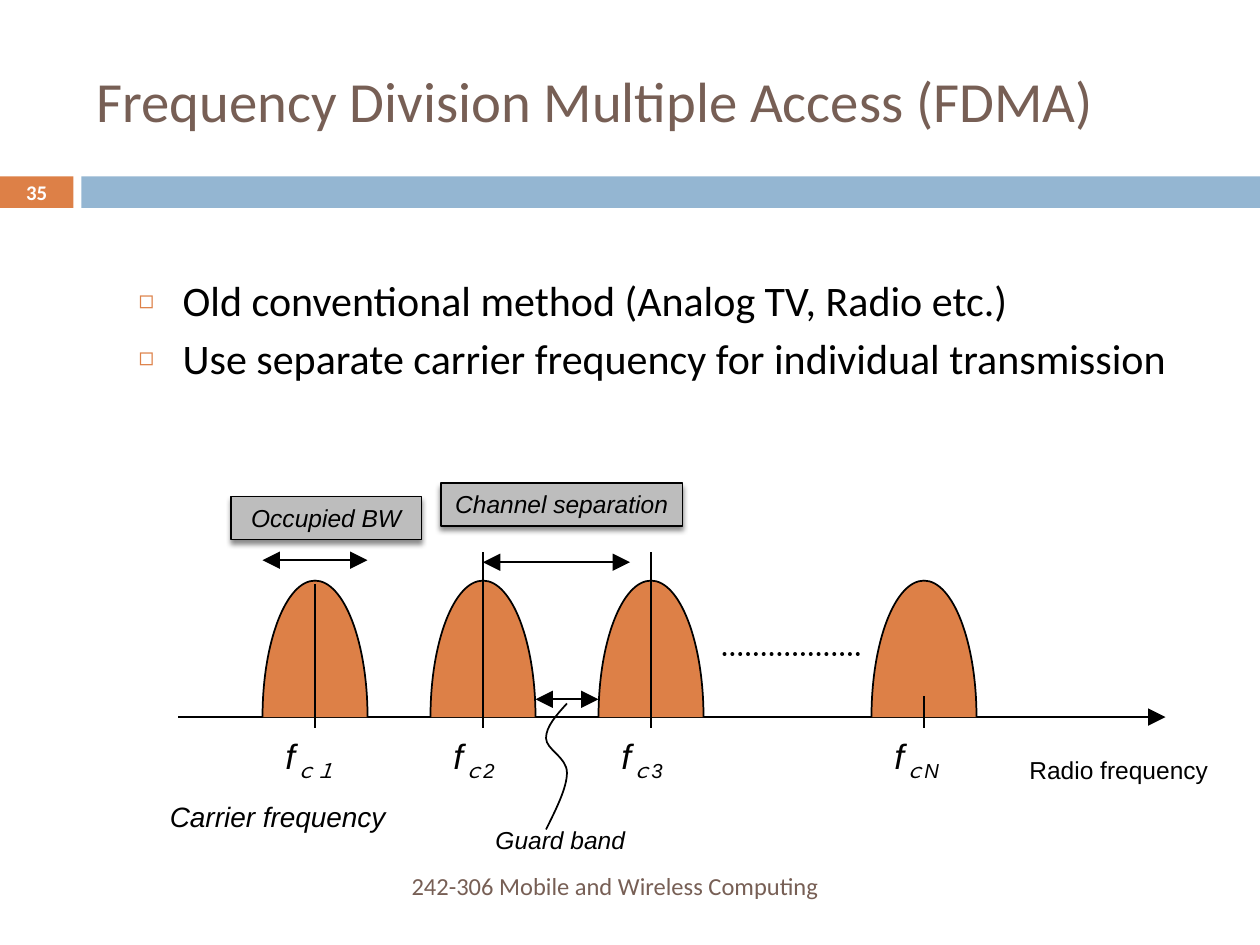
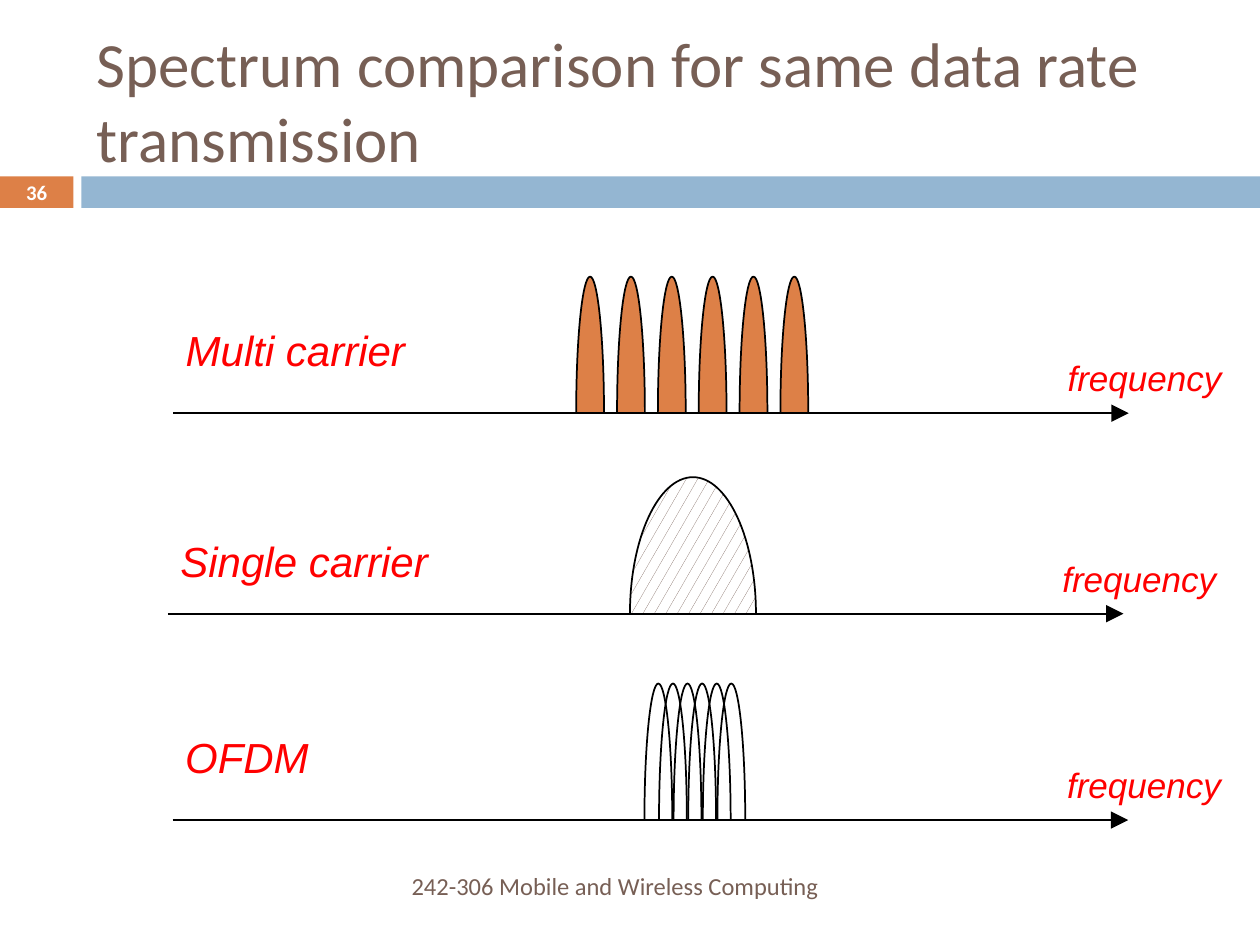
"""Build two slides on frequency division and carrier spectra."""
import dataclasses
from typing import Any, Optional, Sequence

import lxml.etree
import pptx
import pptx.dml.color
import pptx.enum.dml
import pptx.enum.shapes
import pptx.enum.text
import pptx.oxml.ns
import pptx.util

COLOURS = {
    "ink": "000000", "paper": "FFFFFF", "title": "775F55", "accent": "DD8047",
    "band": "94B6D2", "callout": "BDBDBD", "caption": "FF0000",
}
SLIDE_WIDTH = pptx.util.Inches(10)
SLIDE_HEIGHT = pptx.util.Inches(7.5)
COLUMNS, ROWS = 120, 90
HEADING_FONT, DIAGRAM_FONT = "Calibri", "Arial"
LOBE_HEIGHT = 13
ROUNDNESS = 0.55
COURSE = "242-306 Mobile and Wireless Computing"
ALIGN = pptx.enum.text.PP_ALIGN
ANCHOR = pptx.enum.text.MSO_ANCHOR
DASH = pptx.enum.dml.MSO_LINE
Point = tuple[float, float]


@dataclasses.dataclass(frozen=True)
class Area:
    """A rectangle in grid columns and rows."""
    left: float
    top: float
    width: float
    height: float

    def emu(self) -> tuple[int, int, int, int]:
        """Return the rectangle in slide units."""
        return (*to_emu((self.left, self.top)), *to_emu((self.width, self.height)))


@dataclasses.dataclass(frozen=True)
class TextStyle:
    """The look of one paragraph."""
    size: float
    colour: str = "ink"
    font: str = DIAGRAM_FONT
    italic: bool = False
    bold: bool = False
    align: Any = ALIGN.LEFT


@dataclasses.dataclass(frozen=True)
class Label:
    """A short text, with an optional lowered part after it."""
    text: str
    area: Area
    style: TextStyle
    fill: Optional[str] = None
    subscript: str = ""
    anchor: Any = ANCHOR.TOP
    framed: bool = False


@dataclasses.dataclass(frozen=True)
class Stroke:
    """A straight line with optional arrowheads."""
    start: Point
    end: Point
    arrows: Sequence[str] = ()
    width: float = 1
    dash: Any = None


@dataclasses.dataclass(frozen=True)
class Carrier:
    """One channel of the frequency division diagram."""
    centre: float
    index: str
    mark_top: float


@dataclasses.dataclass(frozen=True)
class Spectrum:
    """One row of the spectrum comparison."""
    name: str
    axis_left: float
    axis_row: float
    name_rise: float
    first_centre: float
    lobe_width: float
    fill: Optional[str] = None
    count: int = 1
    pitch: float = 0


NOTE = TextStyle(14, italic=True)
CALLOUT = dataclasses.replace(NOTE, align=ALIGN.CENTER)
BANDS = ((Area(0, 16.8, 7, 3), "accent"), (Area(7.75, 16.8, 112.25, 3), "band"))
FDMA_AXIS = 68.3
CARRIERS = (
    Carrier(30, "ｃ１", 55.6), Carrier(46, "ｃ2", 52.6),
    Carrier(62, "ｃ3", 52.6), Carrier(88, "ｃN", 66.3),
)
FDMA_LABELS = (
    Label("Radio frequency", Area(96.85, 71.3, 19.8, 4.1), TextStyle(14), "paper"),
    Label("Carrier frequency", Area(15, 75.6, 29, 4.4), TextStyle(16, italic=True), "paper"),
    Label("Occupied BW", Area(22, 47.3, 18.15, 4.1), CALLOUT, "callout", framed=True),
    Label("Channel separation", Area(42, 46, 23, 4.1), CALLOUT, "callout", framed=True),
    Label("Guard band", Area(46, 78, 20, 4.1), NOTE, "paper"),
)
BOTH_ENDS = ("headEnd", "tailEnd")
FDMA_MEASURES = (
    Stroke((69, 62.3), (82, 62.3), width=2.25, dash=DASH.ROUND_DOT),
    Stroke((25, 53.35), (35, 53.35), BOTH_ENDS),
    Stroke((46, 53.55), (60, 53.55), BOTH_ENDS),
    Stroke((51, 66.6), (57, 66.6), BOTH_ENDS),
)
GUARD_LEADER = (
    (54, 67), (53, 68.1), (52, 69.2), (52, 70.3), (52, 71.4), (54, 72.1), (54, 73.6),
    (54, 75), (53, 77), (52, 79),
)
SPECTRA = (
    Spectrum("Single carrier", 16, 58.45, 8, 66, 12, "pattern"),
    Spectrum("OFDM", 16.45, 78.1, 9, 62.7, 2.65, None, 6, 1.39),
    Spectrum("Multi carrier", 16.5, 39.35, 9, 56.2, 2.65, "accent", 6, 3.89),
)


def to_emu(point: Point) -> tuple[int, int]:
    """Turn a grid point into slide units."""
    return round(point[0] * SLIDE_WIDTH / COLUMNS), round(point[1] * SLIDE_HEIGHT / ROWS)


def rgb(name: str) -> pptx.dml.color.RGBColor:
    """Look up a named colour."""
    return pptx.dml.color.RGBColor.from_string(COLOURS[name])


def add_xml(parent: Any, tag: str, **attributes: str) -> Any:
    """Append one drawing element."""
    return lxml.etree.SubElement(parent, pptx.oxml.ns.qn(f"a:{tag}"), attributes)


def paint(fill: Any, name: Optional[str]) -> None:
    """Apply a named colour, the speckled pattern or no fill."""
    if name is None:
        fill.background()
    elif name == "pattern":
        fill.patterned()
        fill.pattern = pptx.enum.dml.MSO_PATTERN.SMALL_CONFETTI
        fill.fore_color.rgb, fill.back_color.rgb = rgb("title"), rgb("paper")
    else:
        fill.solid()
        fill.fore_color.rgb = rgb(name)


def ink_line(line: Any, width: float) -> None:
    """Give a line the ink colour and a width."""
    line.color.rgb = rgb("ink")
    line.width = pptx.util.Pt(width)


def style_paragraph(paragraph: Any, style: TextStyle) -> None:
    """Format a whole paragraph."""
    paragraph.alignment = style.align
    font = paragraph.font
    font.name, font.size = style.font, pptx.util.Pt(style.size)
    font.bold, font.italic = style.bold, style.italic
    font.color.rgb = rgb(style.colour)


def add_label(slide: Any, label: Label) -> None:
    """Draw a label, framed and shadowed when asked."""
    box = slide.shapes.add_textbox(*label.area.emu())
    paint(box.fill, label.fill)
    if label.framed:
        ink_line(box.line, 0.79)
        effects = add_xml(box._element.spPr, "effectLst")
        shadow = add_xml(effects, "outerShdw", blurRad="38100", dist="30000",
                         dir="5400000", rotWithShape="0")
        add_xml(add_xml(shadow, "srgbClr", val=COLOURS["ink"]), "alpha", val="45000")
    frame = box.text_frame
    frame.word_wrap = True
    frame.vertical_anchor = label.anchor
    paragraph = frame.paragraphs[0]
    paragraph.add_run().text = label.text
    if label.subscript:
        lowered = paragraph.add_run()
        lowered.text = label.subscript
        lowered._r.get_or_add_rPr().set("baseline", "-25000")
    style_paragraph(paragraph, label.style)


def add_stroke(slide: Any, stroke: Stroke) -> None:
    """Draw a straight line."""
    connector = slide.shapes.add_connector(
        pptx.enum.shapes.MSO_CONNECTOR.STRAIGHT, *to_emu(stroke.start), *to_emu(stroke.end))
    ink_line(connector.line, stroke.width)
    outline = connector.line._get_or_add_ln()
    if stroke.dash:
        connector.line.dash_style = stroke.dash
        outline.set("cap", "rnd")
    for end in stroke.arrows:
        add_xml(outline, end, type="triangle", w="lg", len="lg")
    add_xml(connector._element.spPr, "effectLst")


def add_curve(slide: Any, points: Sequence[Point], fill: Optional[str] = None) -> None:
    """Draw cubic curves through a start and groups of three points."""
    start, *rest = [to_emu(point) for point in points]
    builder = slide.shapes.build_freeform(*start)
    builder.add_line_segments(rest, close=False)
    curve = builder.convert_to_shape()
    curve.shadow.inherit = False
    paint(curve.fill, fill)
    ink_line(curve.line, 1)
    outline = next(curve._element.iter(pptx.oxml.ns.qn("a:path")))
    steps = outline.findall(pptx.oxml.ns.qn("a:lnTo"))
    for first in range(0, len(steps), 3):
        cubic = add_xml(outline, "cubicBezTo")
        for step in steps[first:first + 3]:
            cubic.append(step[0])
            outline.remove(step)


def add_lobe(slide: Any, centre: float, base: float, width: float, fill: Optional[str]) -> None:
    """Draw the half ellipse of one carrier."""
    left, right, top = centre - width / 2, centre + width / 2, base - LOBE_HEIGHT
    shoulder = base - LOBE_HEIGHT * ROUNDNESS
    reach = width / 2 * ROUNDNESS
    add_curve(slide, (
        (right, base), (right, shoulder), (centre + reach, top), (centre, top),
        (centre - reach, top), (left, shoulder), (left, base),
    ), fill)


def place(placeholder: Any, area: Area) -> Any:
    """Move a placeholder and return its text frame."""
    placeholder.left, placeholder.top, placeholder.width, placeholder.height = area.emu()
    placeholder.text_frame.auto_size = pptx.enum.text.MSO_AUTO_SIZE.NONE
    return placeholder.text_frame


def move_bands_to_master(deck: Any, slide: Any) -> None:
    """Draw the bands once, on the master shared by all slides."""
    for identifier, (area, colour) in enumerate(BANDS, start=101):
        band = slide.shapes.add_shape(pptx.enum.shapes.MSO_SHAPE.RECTANGLE, *area.emu())
        band.shadow.inherit = False
        paint(band.fill, colour)
        band.line.fill.background()
        band._element.nvSpPr.cNvPr.set("id", str(identifier))
        deck.slide_master.shapes._spTree.append(band._element)


def start_slide(deck: Any, layout: int, title: str, size: float, number: int) -> Any:
    """Add a slide with its number, title and footer."""
    slide = deck.slides.add_slide(deck.slide_layouts[layout])
    heading = place(slide.shapes.title, Area(8, 3, 107, 13))
    heading.text = title
    heading.vertical_anchor = ANCHOR.MIDDLE
    style_paragraph(heading.paragraphs[0], TextStyle(size, "title", HEADING_FONT))
    number_style = TextStyle(11.9, "paper", HEADING_FONT, bold=True, align=ALIGN.CENTER)
    footer_style = TextStyle(14, "title", HEADING_FONT, align=ALIGN.RIGHT)
    add_label(slide, Label(str(number), Area(0, 16.7, 7, 3.2), number_style, anchor=ANCHOR.MIDDLE))
    add_label(slide, Label(COURSE, Area(8, 82, 71.15, 4.8), footer_style, anchor=ANCHOR.MIDDLE))
    return slide


def fill_bullets(frame: Any, items: Sequence[str]) -> None:
    """Write a list with small square bullets."""
    frame.text = "\n".join(items)
    for position, paragraph in enumerate(frame.paragraphs):
        properties = paragraph._p.get_or_add_pPr()
        indent = pptx.util.Inches(0.35)
        properties.set("marL", str(indent))
        properties.set("indent", str(-indent))
        add_xml(add_xml(properties, "buClr"), "srgbClr", val=COLOURS["accent"])
        add_xml(properties, "buSzPct", val="60000")
        add_xml(properties, "buChar", char="◻")
        paragraph.line_spacing = 0.9
        paragraph.space_before = pptx.util.Pt(7 if position else 0)
        style_paragraph(paragraph, TextStyle(24, font=HEADING_FONT))


def build_fdma(deck: Any) -> None:
    """Build the frequency division slide."""
    slide = start_slide(deck, 1, "Frequency Division Multiple Access (FDMA)", 32.4, 35)
    move_bands_to_master(deck, slide)
    fill_bullets(place(slide.placeholders[1], Area(12, 26.1, 104, 17.4)), (
        "Old conventional method (Analog TV, Radio etc.)",
        "Use separate carrier frequency for individual transmission",
    ))
    add_stroke(slide, Stroke((17, FDMA_AXIS), (111, FDMA_AXIS), ("tailEnd",)))
    for carrier in CARRIERS:
        add_lobe(slide, carrier.centre, FDMA_AXIS, 10, "accent")
        add_stroke(slide, Stroke((carrier.centre, FDMA_AXIS + 2),
                                 (carrier.centre, carrier.mark_top)))
        add_label(slide, Label("f", Area(carrier.centre - 4, FDMA_AXIS + 1.05, 11, 5.3),
                               TextStyle(20, italic=True), "paper", carrier.index))
    for measure in FDMA_MEASURES:
        add_stroke(slide, measure)
    for label in FDMA_LABELS:
        add_label(slide, label)
    add_curve(slide, GUARD_LEADER)


def build_comparison(deck: Any) -> None:
    """Build the spectrum comparison slide."""
    slide = start_slide(deck, 5, "Spectrum comparison for same data rate transmission", 36, 36)
    for spectrum in SPECTRA:
        left, row = spectrum.axis_left, spectrum.axis_row
        for index in range(spectrum.count):
            add_lobe(slide, spectrum.first_centre + index * spectrum.pitch, row,
                     spectrum.lobe_width, spectrum.fill)
        add_stroke(slide, Stroke((left, row), (left + 91, row), ("tailEnd",)))
        add_label(slide, Label(spectrum.name, Area(left, row - spectrum.name_rise, 32, 6),
                               TextStyle(24, "caption", italic=True)))
        add_label(slide, Label("frequency", Area(left + 84, row - 5.97, 18, 5.2),
                               TextStyle(20, "caption", italic=True)))


def main() -> None:
    """Build and save the deck."""
    deck = pptx.Presentation()
    deck.slide_width, deck.slide_height = SLIDE_WIDTH, SLIDE_HEIGHT
    build_fdma(deck)
    build_comparison(deck)
    deck.save("out.pptx")


if __name__ == "__main__":
    main()
